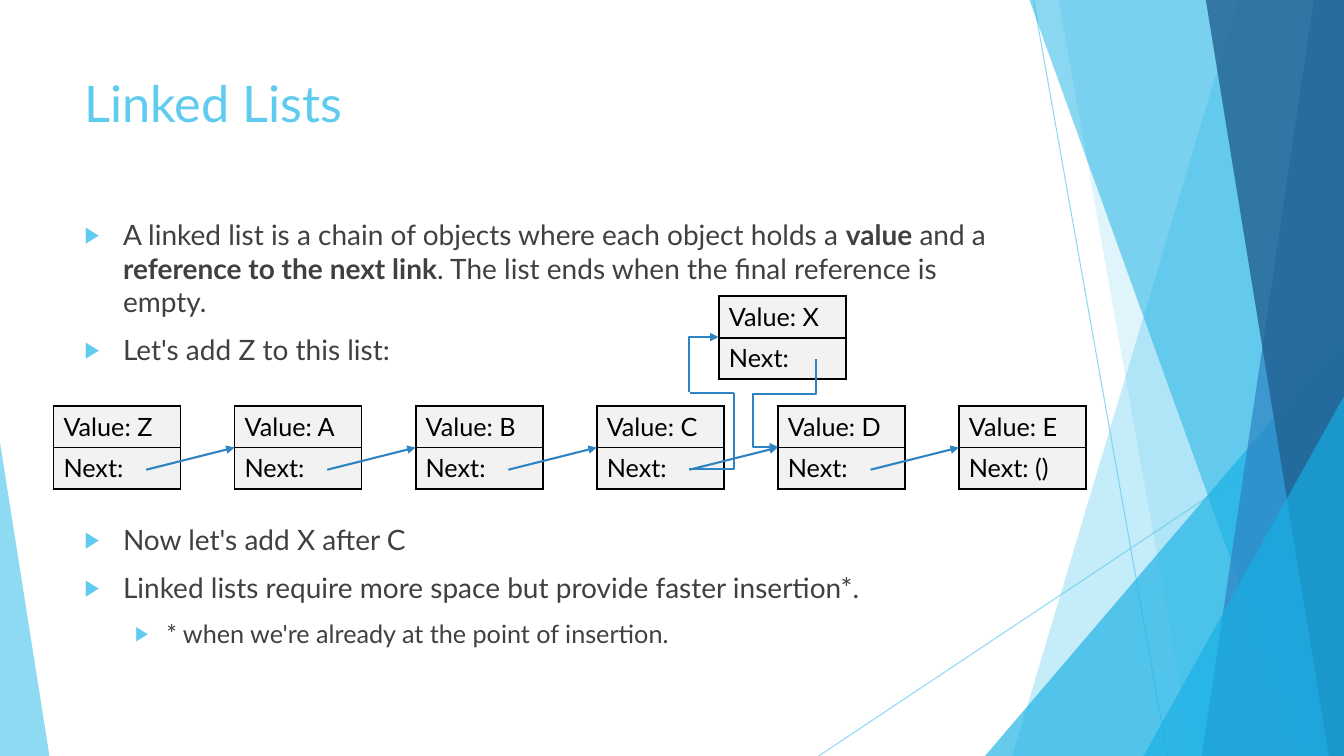
"""Build the linked list insertion slide."""
from dataclasses import dataclass
from typing import Any, Optional, Union

from lxml.etree import SubElement
from pptx import Presentation
from pptx.dml.color import RGBColor
from pptx.enum.shapes import MSO_CONNECTOR, MSO_SHAPE
from pptx.enum.text import MSO_ANCHOR, MSO_AUTO_SIZE, PP_ALIGN
from pptx.oxml.ns import qn
from pptx.util import Inches, Pt

FONT = "Lato"
SKY = RGBColor(0x5F, 0xCB, 0xEF)
CYAN = RGBColor(0x17, 0xB0, 0xE4)
BLUE = RGBColor(0x2E, 0x83, 0xC3)
NAVY = RGBColor(0x22, 0x62, 0x92)
GREY = RGBColor(0x40, 0x40, 0x40)
PALE = RGBColor(0xF2, 0xF2, 0xF2)
BLACK = RGBColor(0, 0, 0)
WIDTH, HEIGHT = 13.33, 7.5
NODE_W, ROW_H = 1.26, 0.41
NODE_LEFT, NODE_TOP, NODE_STEP = 0.53, 4.03, 1.796


@dataclass
class Facet:
    top_x: float
    bottom_x: float
    color: RGBColor
    opacity: int


@dataclass
class Corner:
    left: float
    top: float
    width: float
    peak: float
    color: RGBColor
    opacity: int


@dataclass
class Bullet:
    runs: list[tuple[str, bool]]
    level: int = 0
    size: int = 20
    before: int = 10


@dataclass
class Elbow:
    preset: str
    left: float
    top: float
    width: float
    height: float
    flipped: bool
    adjusts: tuple[int, ...] = ()
    arrow: bool = True


DECOR: list[Union[Facet, Corner]] = [
    Facet(12.28, 10.04, SKY, 36),
    Facet(10.5, 11.83, SKY, 20),
    Corner(9.77, 3.33, 3.56, 1, CYAN, 66),
    Facet(10.21, 12.91, CYAN, 50),
    Facet(13.03, 11.92, BLUE, 70),
    Facet(11.96, 13.18, NAVY, 80),
    Corner(11.34, 3.93, 1.99, 1, CYAN, 66),
    Corner(0, 4.39, 0.49, 0, SKY, 70),
]
BULLETS = [
    Bullet([("A linked list is a chain of objects where each object holds a ", False),
            ("value", True), (" and a ", False), ("reference to the next link", True),
            (". The list ends when the final reference is empty.", False)]),
    Bullet([("Let's add Z to this list:", False)]),
    Bullet([("Now let's add X after C", False)], before=112),
    Bullet([("Linked lists require more space but provide faster insertion*.", False)]),
    Bullet([("* when we're already at the point of insertion.", False)], level=1, size=18),
]
ELBOWS = [
    Elbow("bentConnector2", 6.71, 3.47, 0.54, 0.29, True),
    Elbow("bentConnector4", 7.47, 3.81, 0.87, 0.38, False, (39900, 166100)),
    Elbow("bentConnector3", 6.68, 4.06, 0.76, 0.44, True, (300,), False),
]


def set_opacity(fill_parent: Any, percent: int) -> None:
    color = fill_parent.find(".//" + qn("a:srgbClr"))
    SubElement(color, qn("a:alpha"), val=str(percent * 1000))


def add_line(shapes: Any, x1: float, y1: float, x2: float, y2: float,
             color: RGBColor = BLUE, width: float = 1.5, arrow: bool = False,
             kind: Any = MSO_CONNECTOR.STRAIGHT) -> Any:
    c = shapes.add_connector(kind, Inches(x1), Inches(y1), Inches(x2), Inches(y2))
    c.line.color.rgb = color
    c.line.width = Pt(width)
    if arrow:
        SubElement(c.line._get_or_add_ln(), qn("a:tailEnd"), type="triangle")
    SubElement(c.element.spPr, qn("a:effectLst"))
    return c


def add_decor(shapes: Any, item: Union[Facet, Corner]) -> None:
    if isinstance(item, Facet):
        fb = shapes.build_freeform(Inches(item.top_x), 0)
        fb.add_line_segments([(Inches(x), Inches(y)) for x, y in
                              ((WIDTH, 0), (WIDTH, HEIGHT), (item.bottom_x, HEIGHT))])
        sp = fb.convert_to_shape()
    else:
        sp = shapes.add_shape(MSO_SHAPE.ISOSCELES_TRIANGLE, Inches(item.left), Inches(item.top),
                              Inches(item.width), Inches(HEIGHT - item.top))
        sp.adjustments[0] = item.peak
    sp.shadow.inherit = False
    sp.fill.solid()
    sp.fill.fore_color.rgb = item.color
    sp.line.fill.background()
    set_opacity(sp.element.spPr, item.opacity)


def add_run(p: Any, text: str, size: int, color: RGBColor, bold: bool = False) -> None:
    r = p.add_run()
    r.text = text
    r.font.name = FONT
    r.font.size = Pt(size)
    r.font.bold = bold
    r.font.color.rgb = color


def place(sp: Any, top: float, height: float) -> Any:
    sp.left, sp.top, sp.width, sp.height = (Inches(v) for v in (0.74, top, 9.4, height))
    tf = sp.text_frame
    tf.word_wrap = True
    tf.auto_size = MSO_AUTO_SIZE.NONE
    tf.vertical_anchor = MSO_ANCHOR.TOP
    return tf


def add_bullet(p: Any, bullet: Bullet) -> None:
    p.level = bullet.level
    p.space_before = Pt(bullet.before)
    pPr = p._p.get_or_add_pPr()
    margin, indent = ((0.38, -0.38), (0.81, -0.31))[bullet.level]
    pPr.set("marL", str(Inches(margin)))
    pPr.set("indent", str(Inches(indent)))
    SubElement(SubElement(pPr, qn("a:buClr")), qn("a:srgbClr"), val=str(SKY))
    SubElement(pPr, qn("a:buSzPct"), val="80000")
    SubElement(pPr, qn("a:buChar"), char="▶")
    for text, bold in bullet.runs:
        add_run(p, text, bullet.size, GREY, bold)


def add_node(shapes: Any, name: str, left: float, top: float, following: str = "") -> Any:
    frame = shapes.add_table(2, 1, Inches(left), Inches(top), Inches(NODE_W), Inches(2 * ROW_H))
    table = frame.table
    table.first_row = table.horz_banding = False
    for row, text in enumerate((f"Value: {name}", f"Next: {following}".strip())):
        cell = table.cell(row, 0)
        add_run(cell.text_frame.paragraphs[0], text, 18, BLACK)
        tcPr = cell._tc.get_or_add_tcPr()
        for side in ("lnL", "lnR", "lnT", "lnB"):
            ln = SubElement(tcPr, qn("a:" + side), w=str(Pt(1.5)))
            SubElement(SubElement(ln, qn("a:solidFill")), qn("a:srgbClr"), val=str(BLACK))
        cell.fill.solid()
        cell.fill.fore_color.rgb = PALE
    return frame


def add_elbow(shapes: Any, e: Elbow) -> None:
    ends = [(e.left, e.top), (e.left + e.width, e.top + e.height)]
    (x1, y1), (x2, y2) = reversed(ends) if e.flipped else ends
    c = add_line(shapes, x1, y1, x2, y2, arrow=e.arrow, kind=MSO_CONNECTOR.ELBOW)
    c.element.spPr.find(qn("a:xfrm")).set("rot", str(90 * 60000))
    geom = c.element.spPr.find(qn("a:prstGeom"))
    geom.set("prst", e.preset)
    for i, value in enumerate(e.adjusts, 1):
        SubElement(geom.find(qn("a:avLst")), qn("a:gd"), name=f"adj{i}", fmla=f"val {value}")


def main() -> None:
    prs = Presentation()
    prs.slide_width, prs.slide_height = Inches(WIDTH), Inches(HEIGHT)
    s = prs.slides.add_slide(prs.slide_layouts[1])

    decor = s.shapes.add_group_shape()
    for ends in ((10.25, 0, 11.58, HEIGHT), (WIDTH, 4.03, 8.12, HEIGHT)):
        set_opacity(add_line(decor.shapes, *ends, SKY, 0.75).element.spPr, 70)
    for item in DECOR:
        add_decor(decor.shapes, item)
    s.shapes.title.element.addprevious(decor.element)

    p = place(s.shapes.title, 0.67, 1.44).paragraphs[0]
    p.alignment = PP_ALIGN.LEFT
    add_run(p, "Linked Lists", 36, SKY)
    tf = place(s.placeholders[1], 2.11, 4.5)
    for i, bullet in enumerate(BULLETS):
        add_bullet(tf.add_paragraph() if i else tf.paragraphs[0], bullet)

    nodes = [add_node(s.shapes, name, NODE_LEFT + i * NODE_STEP, NODE_TOP,
                      "()" if name == "E" else "") for i, name in enumerate("ZABCDE")]
    add_node(s.shapes, "X", 7.13, 2.94)
    for i, target in enumerate(nodes[1:]):
        x = NODE_LEFT + i * NODE_STEP
        c = add_line(s.shapes, x + 0.92, 4.66, x + NODE_STEP, 4.44, arrow=True)
        c.end_connect(target, 1)
    for elbow in ELBOWS:
        add_elbow(s.shapes, elbow)
    add_line(s.shapes, 7.28, 3.9, 6.84, 3.9)
    prs.save("out.pptx")


if __name__ == "__main__":
    main()
